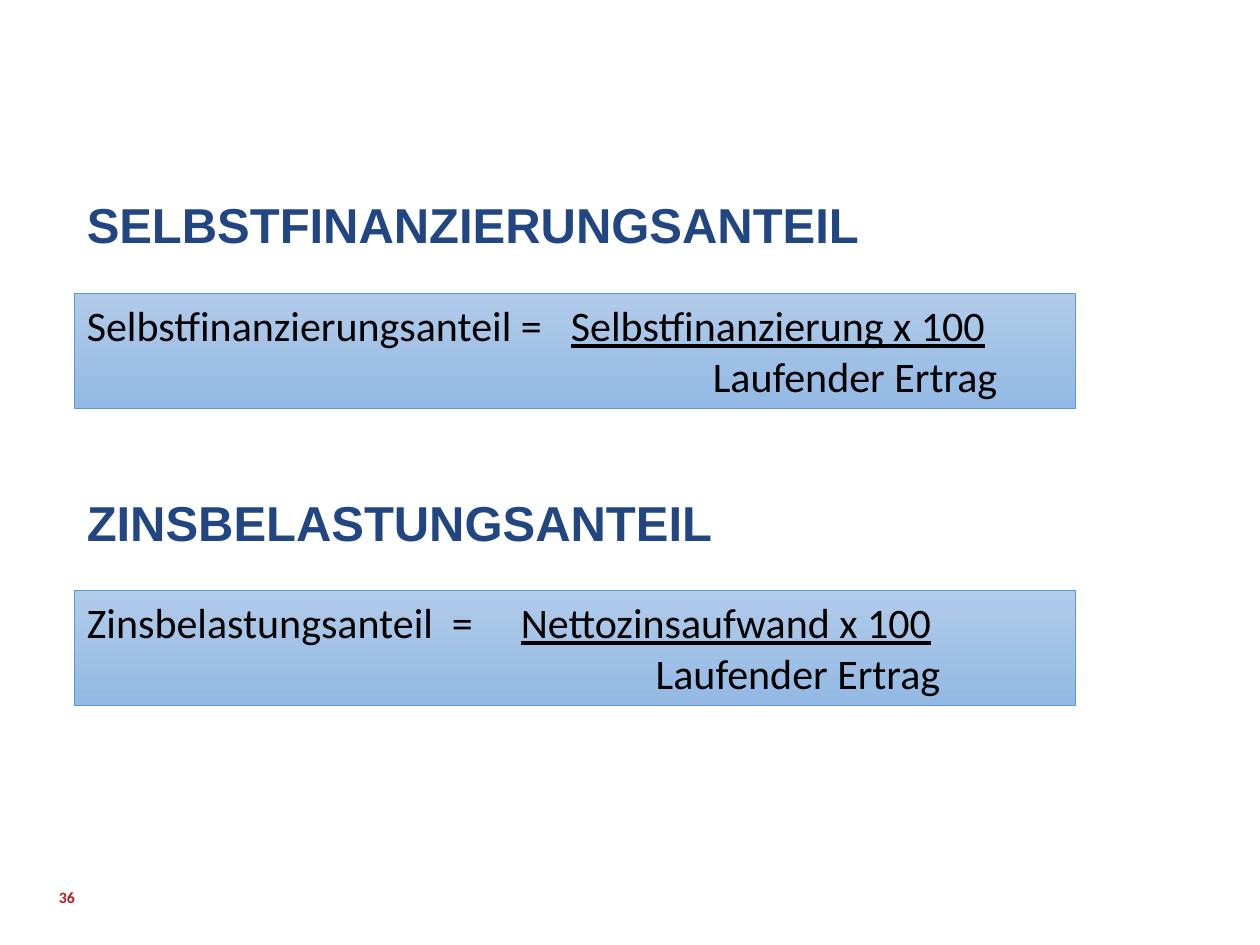
from pptx import Presentation
from pptx.dml.color import RGBColor as Rgb
from pptx.enum.shapes import MSO_SHAPE as Shape
from pptx.enum.text import MSO_ANCHOR as Anchor
from pptx.oxml.ns import qn
from pptx.util import Cm, Pt
from lxml.etree import SubElement as Sub

HUES = {"head": "224681", "num": "B21D24", "text": "000000",
        "edge": "5B9BD5", "top": "B1CBE9", "base": "93B9E4"}
LEFT, WIDE = 1.5, 20.19


def hue(name):
    return Rgb.from_string(HUES[name])


def add_run(para, text, size, color, face="Calibri", bold=False, under=False):
    run = para.add_run()
    run.text = text
    font = run.font
    font.name, font.size = face, Pt(size)
    font.bold, font.underline = bold, under
    font.color.rgb = hue(color)


def add_box(slide, left, top, width, height):
    box = slide.shapes.add_textbox(Cm(left), Cm(top), Cm(width), Cm(height))
    box.text_frame.word_wrap = True
    return box.text_frame


def add_head(slide, top, text):
    para = add_box(slide, LEFT, top, WIDE, 1.6).paragraphs[0]
    para.line_spacing = 0.9
    add_run(para, text, 28, "head", "Arial", bold=True)


def add_page(slide, text):
    frame = add_box(slide, 1.19, 17.58, 5.72, 1.02)
    frame.margin_left = frame.margin_right = 0
    frame.margin_top = frame.margin_bottom = 0
    frame.vertical_anchor = Anchor.MIDDLE
    add_run(frame.paragraphs[0], text, 9, "num", bold=True)


def set_tabs(para, stops):
    tabs = Sub(para._p.get_or_add_pPr(), qn("a:tabLst"))
    for stop in stops:
        Sub(tabs, qn("a:tab"), pos=str(Cm(stop)), algn="l")


def add_ratio(slide, top, name, over, under, stops, indent):
    box = slide.shapes.add_shape(Shape.RECTANGLE, Cm(LEFT), Cm(top), Cm(WIDE), Cm(2.31))
    box.shadow.inherit = False
    box.fill.gradient()
    box.fill.gradient_angle = 270
    for stop, key in zip(box.fill.gradient_stops, ("top", "base")):
        stop.color.rgb = hue(key)
    box.line.color.rgb = hue("edge")
    box.line.width = Pt(0.5)
    frame = box.text_frame
    frame.word_wrap = True
    frame.vertical_anchor = Anchor.TOP
    first, last = frame.paragraphs[0], frame.add_paragraph()
    set_tabs(first, stops)
    last._p.get_or_add_pPr().set("marL", str(Cm(indent)))
    for para in (first, last):
        para._p.get_or_add_pPr().set("algn", "l")
    add_run(first, name + "\t", 24, "text")
    add_run(first, over, 24, "text", under=True)
    add_run(last, under, 24, "text")


def main():
    deck = Presentation()
    deck.slide_width, deck.slide_height = Cm(25.4), Cm(19.05)
    slide = deck.slides.add_slide(deck.slide_layouts[6])
    add_head(slide, 3.94, "SELBSTFINANZIERUNGSANTEIL")
    add_page(slide, "36")
    add_ratio(slide, 5.92, "Selbstfinanzierungsanteil =", "Selbstfinanzierung x 100",
              "Laufender Ertrag", [9.76], 12.62)
    add_head(slide, 9.93, "ZINSBELASTUNGSANTEIL")
    add_ratio(slide, 11.91, "Zinsbelastungsanteil\t=", "Nettozinsaufwand x 100",
              "Laufender Ertrag", [7.36, 8.75], 11.47)
    deck.save("out.pptx")


if __name__ == "__main__":
    main()
